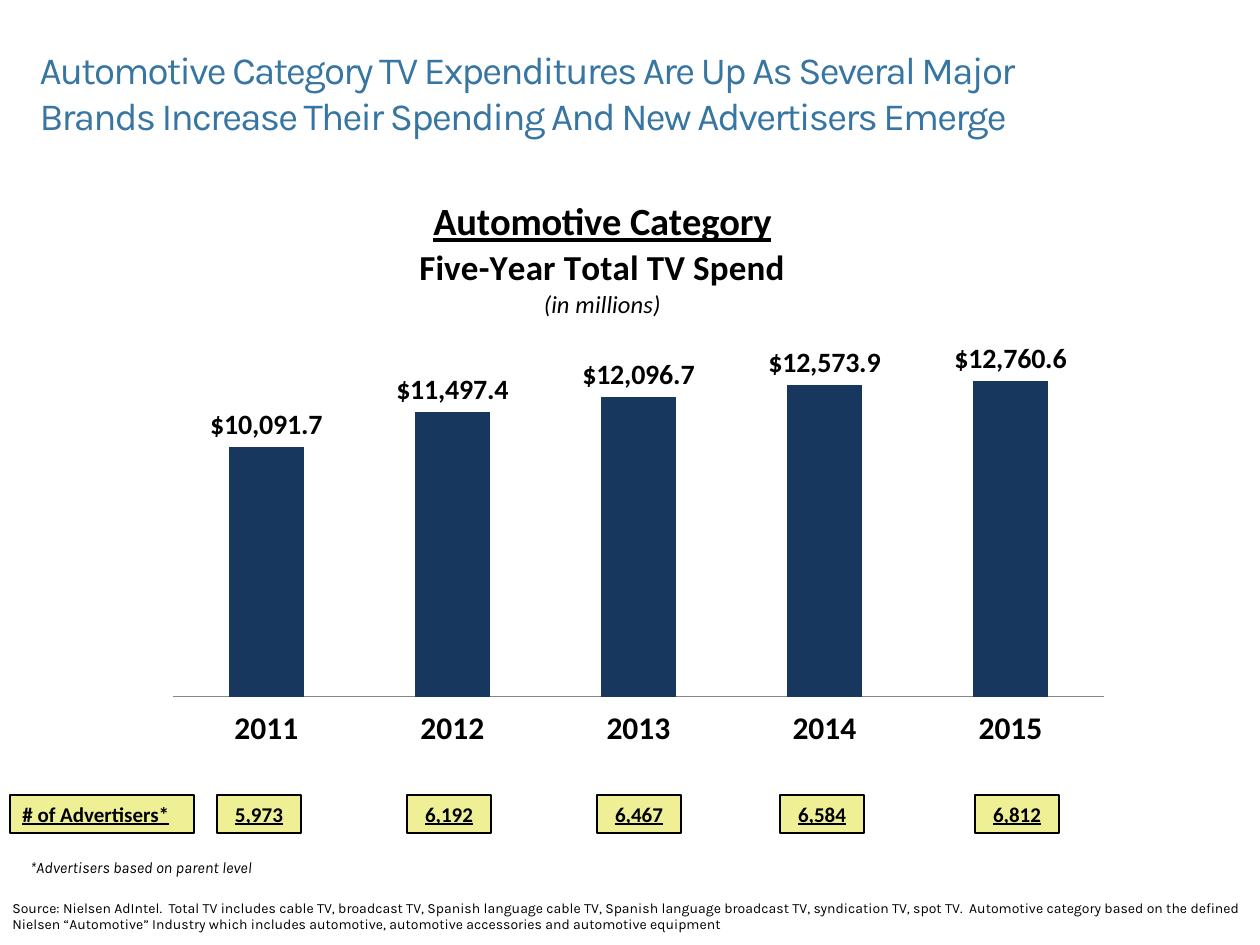
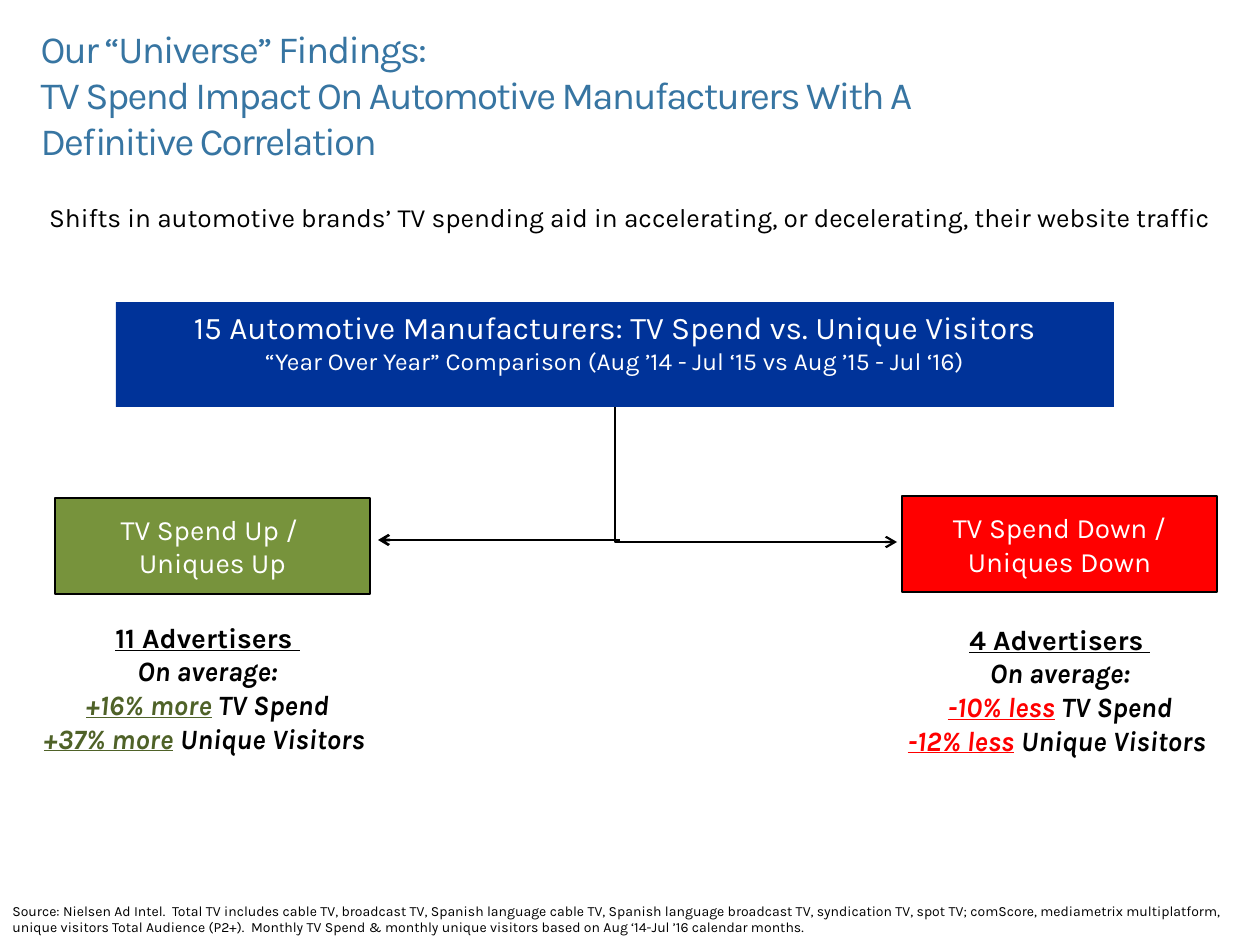
from lxml import etree
from pptx import Presentation
from pptx.chart.data import CategoryChartData
from pptx.dml.color import RGBColor
from pptx.enum.chart import XL_CHART_TYPE, XL_LABEL_POSITION, XL_TICK_LABEL_POSITION, XL_TICK_MARK
from pptx.enum.shapes import MSO_CONNECTOR, MSO_SHAPE
from pptx.enum.text import MSO_ANCHOR, MSO_AUTO_SIZE, PP_ALIGN
from pptx.oxml.ns import qn
from pptx.util import Emu, Inches, Pt

LEFT, CENTER = PP_ALIGN.LEFT, PP_ALIGN.CENTER
TOP, MIDDLE = MSO_ANCHOR.TOP, MSO_ANCHOR.MIDDLE
NO_AUTOFIT = MSO_AUTO_SIZE.NONE
RECT = MSO_SHAPE.RECTANGLE
STRAIGHT, ELBOW = MSO_CONNECTOR.STRAIGHT, MSO_CONNECTOR.ELBOW
COLUMNS = XL_CHART_TYPE.COLUMN_CLUSTERED
OUTSIDE_END = XL_LABEL_POSITION.OUTSIDE_END
NO_TICK = XL_TICK_MARK.NONE
LOW = XL_TICK_LABEL_POSITION.LOW
TITLE_ONLY = 5
MONEY = '"$"#,##0.0'

BLACK, WHITE = "000000", "FFFFFF"
TITLE_BLUE, BANNER_BLUE, NAVY = "3775A2", "003399", "17375E"
YELLOW, GREEN, DARK_GREEN, RED, GRAY = "EFEF96", "77933C", "4F6228", "FF0000", "868686"


def px(n):
    """Turn pixels into EMU."""
    return Emu(round(n * 914400 / 126))


def rgb(value):
    """Turn a hex string into a colour."""
    return RGBColor.from_string(value)


def set_font(font, size, color=BLACK, name="Karla", bold=False, italic=False, underline=False):
    """Set every font property the deck uses."""
    font.size, font.name = Pt(size), name
    font.bold, font.italic, font.underline = bold, italic, underline
    font.color.rgb = rgb(color)


def set_layout(parent, index, **edges):
    """Give a chart part a manual layout."""
    for old in parent.findall(qn("c:layout")):
        parent.remove(old)
    layout = etree.Element(qn("c:layout"))
    manual = etree.SubElement(layout, qn("c:manualLayout"))
    for tag, value in edges.items():
        etree.SubElement(manual, qn("c:" + tag)).set("val", str(value))
    parent.insert(index, layout)


class Deck:
    """Hold the shared style and the current slide."""

    def __init__(self):
        """Start an empty deck."""
        self.prs = Presentation()
        self.prs.slide_width, self.prs.slide_height = Inches(10), Inches(7.5)
        self.slide = None

    def new_slide(self, lines, x, y, w, h):
        """Add a slide with its title."""
        self.slide = self.prs.slides.add_slide(self.prs.slide_layouts[TITLE_ONLY])
        sp = self.slide.shapes.title
        sp.left, sp.top, sp.width, sp.height = px(x), px(y), px(w), px(h)
        self.set_text(sp, lines, 22, anchor=MIDDLE, color=TITLE_BLUE)
        for p in sp.text_frame.paragraphs:
            p._p.pPr.find(qn("a:defRPr")).set("spc", "-100")

    def set_text(self, sp, lines, size, align=LEFT, anchor=TOP, **style):
        """Fill a shape with paragraphs of text or of (text, run style) pairs."""
        tf = sp.text_frame
        tf.word_wrap, tf.auto_size, tf.vertical_anchor = True, NO_AUTOFIT, anchor
        for i, line in enumerate(lines):
            p = tf.add_paragraph() if i else tf.paragraphs[0]
            p.alignment = align
            runs = [(line, {})] if isinstance(line, str) else line
            shared = {**style, **runs[0][1]} if len(runs) == 1 else style
            set_font(p.font, size, **shared)
            for text, own in runs:
                r = p.add_run()
                r.text = text
                if len(runs) > 1:
                    set_font(r.font, size, **{**style, **own})

    def text(self, lines, x, y, w, h, size, **style):
        """Add a text box."""
        sp = self.slide.shapes.add_textbox(px(x), px(y), px(w), px(h))
        self.set_text(sp, lines, size, **style)

    def source(self, line, y):
        """Add the source note at the foot."""
        self.text([line], 0, y, 1260, 47, 8)

    def box(self, lines, x, y, w, h, size, fill, outline=True, **style):
        """Add a filled rectangle with text."""
        sp = self.slide.shapes.add_shape(RECT, px(x), px(y), px(w), px(h))
        sp.shadow.inherit = False
        sp.fill.solid()
        sp.fill.fore_color.rgb = rgb(fill)
        if outline:
            sp.line.color.rgb = rgb(BLACK)
            sp.line.width = Pt(0.75)
        else:
            sp.line.fill.background()
        self.set_text(sp, lines, size, **style)
        return sp

    def arrow(self, x1, y1, x2, y2, width, kind=STRAIGHT):
        """Add a line with an arrowhead at its end."""
        cxn = self.slide.shapes.add_connector(kind, px(x1), px(y1), px(x2), px(y2))
        cxn.line.color.rgb = rgb(BLACK)
        cxn.line.width = Pt(width)
        pr = cxn._element.spPr
        etree.SubElement(pr.find(qn("a:ln")), qn("a:tailEnd")).set("type", "arrow")
        etree.SubElement(pr, qn("a:effectLst"))
        return cxn

    def down_then_right(self, x1, y1, x2, y2, width):
        """Add an arrow that runs down and turns right."""
        cxn = self.arrow(x1, y1, x2, y2, width, ELBOW)
        w, h = x2 - x1, y2 - y1
        cxn.left, cxn.top = px((x1 + x2 - h) / 2), px((y1 + y2 - w) / 2)
        cxn.width, cxn.height = px(h), px(w)
        pr = cxn._element.spPr
        pr.find(qn("a:prstGeom")).set("prst", "bentConnector2")
        xfrm = pr.find(qn("a:xfrm"))
        xfrm.set("rot", "16200000")
        xfrm.set("flipH", "1")

    def columns(self, title, cats, vals, x, y, w, h):
        """Add a column chart with a title of (text, size, style) lines."""
        data = CategoryChartData(number_format=MONEY)
        data.categories = cats
        data.add_series("Series 1", vals)
        chart = self.slide.shapes.add_chart(COLUMNS, px(x), px(y), px(w), px(h), data).chart
        chart.has_legend = False
        set_font(chart.font, 18, name="Calibri")
        chart.has_title = True
        tf = chart.chart_title.text_frame
        for i, (line, size, style) in enumerate(title):
            p = tf.add_paragraph() if i else tf.paragraphs[0]
            r = p.add_run()
            r.text = line
            for font in (p.font, r.font):
                set_font(font, size, name="Calibri", **style)
        set_layout(chart.chart_title._element, 1, xMode="edge", yMode="edge", x=0.27, y=0.09)
        set_layout(chart._chartSpace.chart.plotArea, 0, layoutTarget="inner", xMode="edge",
                   yMode="edge", x=0.02, y=0.34, w=0.96, h=0.55)
        axis = chart.value_axis
        axis.minimum_scale, axis.maximum_scale = 0, 14000
        axis.has_major_gridlines = False
        axis.visible = False
        axis = chart.category_axis
        axis.major_tick_mark = axis.minor_tick_mark = NO_TICK
        axis.tick_label_position = LOW
        axis.format.line.color.rgb = rgb(GRAY)
        set_font(axis.tick_labels.font, 18, name="Calibri", bold=True)
        plot = chart.plots[0]
        plot.gap_width, plot.overlap, plot.vary_by_categories = 150, -25, False
        fill = plot.series[0].format.fill
        fill.solid()
        fill.fore_color.rgb = rgb(NAVY)
        plot.has_data_labels = True
        labels = plot.data_labels
        labels.show_value, labels.position = True, OUTSIDE_END
        labels.number_format, labels.number_format_is_linked = MONEY, False
        set_font(labels.font, 16, name="Calibri", bold=True)


def spend_slide(deck):
    """Build the slide on five years of spend."""
    deck.new_slide(["Automotive Category TV Expenditures Are Up As Several Major Brands "
                    "Increase Their Spending And New Advertisers Emerge"], 27, 32, 1075, 120)
    deck.source("Source: Nielsen AdIntel.  Total TV includes cable TV, broadcast TV, Spanish language "
                "cable TV, Spanish language broadcast TV, syndication TV, spot TV.  Automotive category "
                "based on the defined Nielsen “Automotive” Industry which includes automotive, "
                "automotive accessories and automotive equipment", 893)
    title = [("Automotive Category", 22, {"bold": True, "underline": True}),
             ("Five-Year Total TV Spend", 20, {"bold": True}),
             ("(in millions)", 14, {"italic": True})]
    deck.columns(title, ["2011", "2012", "2013", "2014", "2015"],
                 [10091.7, 11497.4, 12096.7, 12573.9, 12760.6], 154, 136, 969, 630)
    count_style = {"name": "Calibri", "bold": True, "underline": True}
    deck.box(["# of Advertisers*"], 10, 795, 184, 38, 12, YELLOW, **count_style)
    counts = ["5,973", "6,192", "6,467", "6,584", "6,812"]
    for x, count in zip([217, 407, 597, 780, 975], counts):
        deck.box([count], x, 795, 84, 38, 12, YELLOW, align=CENTER, **count_style)
    deck.text(["*Advertisers based on parent level"], 18, 852, 367, 32, 9, italic=True)


def findings_slide(deck):
    """Build the slide on spend and visitors."""
    deck.new_slide(["Our “Universe” Findings:",
                    "TV Spend Impact On Automotive Manufacturers With A Definitive Correlation"],
                   28, 58, 1041, 72)
    banner = deck.box(["15 Automotive Manufacturers: TV Spend vs. Unique Visitors",
                       "“Year Over Year” Comparison (Aug ’14 - Jul ‘15 vs Aug ’15 - Jul ‘16)"],
                      116, 302, 998, 105, 18, BANNER_BLUE, outline=False, align=CENTER, color=WHITE)
    banner.text_frame.paragraphs[1].font.size = Pt(14)
    deck.down_then_right(615, 407, 897, 542, 1.25)
    deck.arrow(620, 540, 378, 540, 1.5)
    groups = [(55, 498, ["TV Spend Up / ", "Uniques Up"], GREEN, 1, 614, 413,
               "11 Advertisers ", DARK_GREEN, "+16% more", "+37% more"),
              (902, 496, ["TV Spend Down / Uniques Down"], RED, 866, 616, 388,
               "4 Advertisers ", RED, "-10% less", "-12% less")]
    for x, y, label, fill, text_x, text_y, text_w, head, color, spend, visitors in groups:
        deck.box(label, x, y, 315, 96, 16, fill, align=CENTER, anchor=MIDDLE, color=WHITE)
        accent = {"color": color, "underline": True}
        lines = [[(head, {"underline": True, "italic": False})],
                 "On average:",
                 [(spend, accent), (" TV Spend", {})],
                 [(visitors, accent), (" ", {"bold": False, "italic": False}), ("Unique Visitors ", {})]]
        deck.text(lines, text_x, text_y, text_w, 147, 16, align=CENTER, anchor=MIDDLE,
                  bold=True, italic=True)
    deck.source("Source: Nielsen Ad Intel.  Total TV includes cable TV, broadcast TV, Spanish language "
                "cable TV, Spanish language broadcast TV, syndication TV, spot TV; comScore, mediametrix "
                "multiplatform, unique visitors Total Audience (P2+).  Monthly TV Spend & monthly unique "
                "visitors based on Aug ‘14-Jul ’16 calendar months.", 896)
    deck.text(["Shifts in automotive brands’ TV spending aid in accelerating, or decelerating, "
               "their website traffic"], 1, 195, 1258, 44, 15, align=CENTER)


def main():
    """Build and save the deck."""
    deck = Deck()
    spend_slide(deck)
    findings_slide(deck)
    deck.prs.save("out.pptx")


if __name__ == "__main__":
    main()
